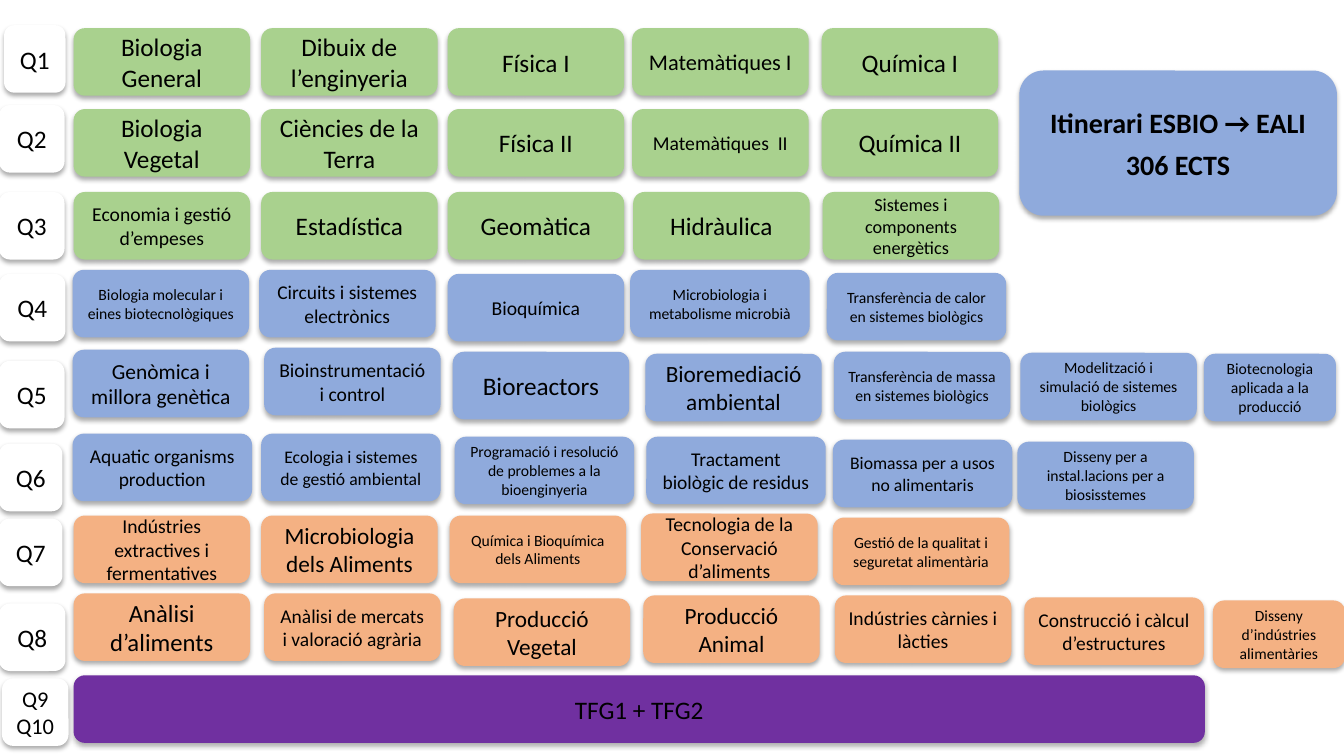
from dataclasses import dataclass

from lxml.etree import SubElement
from pptx import Presentation
from pptx.dml.color import RGBColor
from pptx.enum.shapes import MSO_SHAPE
from pptx.enum.text import MSO_ANCHOR, PP_ALIGN
from pptx.oxml.ns import qn
from pptx.util import Inches, Pt

BLACK = RGBColor(0x00, 0x00, 0x00)
WHITE = RGBColor(0xFF, 0xFF, 0xFF)
GREEN = RGBColor(0xA9, 0xD1, 0x8E)
BLUE = RGBColor(0x8F, 0xAA, 0xDC)
ORANGE = RGBColor(0xF4, 0xB1, 0x83)
PURPLE = RGBColor(0x70, 0x30, 0xA0)

FONT = "Calibri"
COLUMNS = (0.73, 2.59, 4.44, 6.27, 8.15, 10.12, 12.03)
FIRST_ROW, LAST_ROW, ROW_COUNT = 0.28, 6.70, 9
ROW_PITCH = (LAST_ROW - FIRST_ROW) / (ROW_COUNT - 1)
BOX_HEIGHT = 0.67
NORMAL, WIDE, NARROW = 1.75, 1.78, 1.31


@dataclass
class Course:
    name: str
    size: float = 18
    shift_x: float = 0
    shift_y: float = 0
    width: float = NORMAL


@dataclass
class Label:
    lines: tuple
    left: float
    shift_y: float
    width: float
    size: float = 18


LABELS = (
    Label(("Q1",), 0.04, -0.03, 0.61),
    Label(("Q2",), -0.01, -0.04, 0.65),
    Label(("Q3",), -0.01, 0.02, 0.65),
    Label(("Q4",), -0.01, 0.03, 0.66),
    Label(("Q5",), -0.01, 0.09, 0.65),
    Label(("Q6",), -0.01, 0.11, 0.63),
    Label(("Q7",), -0.01, 0.05, 0.63),
    Label(("Q8",), -0.01, 0.09, 0.66),
    Label(("Q9", "Q10"), 0.02, 0.03, 0.66, 16),
)

TERMS = (
    (GREEN, (
        Course("Biologia General"),
        Course("Dibuix de l’enginyeria"),
        Course("Física I"),
        Course("Matemàtiques I", 16),
        Course("Química I"),
    )),
    (GREEN, (
        Course("Biologia Vegetal"),
        Course("Ciències de la Terra"),
        Course("Física II"),
        Course("Matemàtiques  II", 14),
        Course("Química II"),
    )),
    (GREEN, (
        Course("Economia i gestió d’empeses", 14, 0, 0.02),
        Course("Estadística", 18, 0, 0.02),
        Course("Geomàtica", 18, 0, 0.02),
        Course("Hidràulica", 18, 0.01, 0.02),
        Course("Sistemes i components energètics", 13, 0.01, 0.02),
    )),
    (BLUE, (
        Course("Biologia molecular i eines biotecnològiques", 11.2, -0.01, -0.01),
        Course("Circuits i sistemes electrònics", 13.9, -0.02, -0.01),
        Course("Bioquímica", 14, 0, 0.03),
        Course("Microbiologia i metabolisme microbià", 11.2, -0.02, -0.01, WIDE),
        Course("Transferència de calor en sistemes biològics", 11.2, 0.05, 0.02, WIDE),
    )),
    (BLUE, (
        Course("Genòmica i millora genètica", 15.3, -0.01, -0.02),
        Course("Bioinstrumentació i control", 14, 0.03, -0.04),
        Course("Bioreactors", 18, 0.05, 0),
        Course("Bioremediació ambiental", 16.6, 0.13, 0.02),
        Course("Transferència de massa en sistemes biològics", 11.2, 0.12, 0),
        Course("Modelització i simulació de sistemes biològics", 11.2, 0, 0.01),
        Course("Biotecnologia aplicada a la producció", 11.2, -0.09, 0.02, NARROW),
    )),
    (BLUE, (
        Course("Aquatic organisms production", 13.9, -0.01, 0.01, WIDE),
        Course("Ecologia i sistemes de gestió ambiental", 12.6, 0, 0.01, WIDE),
        Course("Programació i resolució de problemes a la bioenginyeria",
               11.2, 0.07, 0.04, WIDE),
        Course("Tractament biològic de residus", 13.9, 0.14, 0.04, WIDE),
        Course("Biomassa per a usos no alimentaris", 12.6, 0.11, 0.07, WIDE),
        Course("Disseny per a instal.lacions per a biosisstemes", 11.2, -0.03, 0.09),
    )),
    (ORANGE, (
        Course("Indústries extractives i fermentatives", 14, 0, 0.02),
        Course("Microbiologia dels Aliments", 16.6, 0, 0.02),
        Course("Química i Bioquímica dels Aliments", 11.2, 0.02, 0.02),
        Course("Tecnologia de la Conservació d’aliments", 14, 0.09, 0),
        Course("Gestió de la qualitat i seguretat alimentària", 11.2, 0.11, 0.04),
    )),
    (ORANGE, (
        Course("Anàlisi d’aliments", 17.6, 0, -0.01),
        Course("Anàlisi de mercats i valoració agrària", 13.9, 0.03, -0.01),
        Course("Producció Vegetal", 16.6, 0.06, 0.04),
        Course("Producció Animal", 16.6, 0.11, 0.01),
        Course("Indústries càrnies i làcties", 14, 0.13, 0.01),
        Course("Construcció i càlcul d’estructures", 13.9, 0.04, 0.03, WIDE),
        Course("Disseny d’indústries alimentàries", 11.1, 0, 0.06, NARROW),
    )),
    (PURPLE, (Course("TFG1 + TFG2", width=11.22),)),
)


def add_soft_shadow(shape):
    shape.shadow.inherit = False
    effects = shape._element.spPr.find(qn("a:effectLst"))
    shadow = SubElement(effects, qn("a:outerShdw"), blurRad=str(Pt(3.5)),
                        dist=str(Pt(2.2)), dir="5400000", rotWithShape="0")
    color = SubElement(shadow, qn("a:srgbClr"), val=str(BLACK))
    SubElement(color, qn("a:alpha"), val="32000")


def add_box(slide, box, fill, lines, size, bold=False, space_before=0):
    shape = slide.shapes.add_shape(MSO_SHAPE.ROUNDED_RECTANGLE, *map(Inches, box))
    shape.fill.solid()
    shape.fill.fore_color.rgb = fill
    shape.line.fill.background()
    add_soft_shadow(shape)
    frame = shape.text_frame
    frame.word_wrap = True
    frame.vertical_anchor = MSO_ANCHOR.MIDDLE
    for index, line in enumerate(lines):
        paragraph = frame.add_paragraph() if index else frame.paragraphs[0]
        paragraph.alignment = PP_ALIGN.CENTER
        paragraph.space_before = Pt(space_before)
        run = paragraph.add_run()
        run.text = line
        run.font.name = FONT
        run.font.size = Pt(size)
        run.font.bold = bold
        run.font.color.rgb = BLACK


def add_term(slide, top, label, fill, courses):
    label_box = (label.left, top + label.shift_y, label.width, BOX_HEIGHT)
    add_box(slide, label_box, WHITE, label.lines, label.size)
    for column, course in zip(COLUMNS, courses):
        course_box = (column + course.shift_x, top + course.shift_y,
                      course.width, BOX_HEIGHT)
        add_box(slide, course_box, fill, (course.name,), course.size)


def add_itinerary(slide, box):
    add_box(slide, box, BLUE, ("Itinerari ESBIO → EALI", "306 ECTS"),
            20, bold=True, space_before=6)


def main():
    presentation = Presentation()
    presentation.slide_width = Inches(13.33)
    presentation.slide_height = Inches(7.5)
    slide = presentation.slides.add_slide(presentation.slide_layouts[6])
    add_itinerary(slide, (10.11, 0.7, 3.15, 1.44))
    for row, (label, (fill, courses)) in enumerate(zip(LABELS, TERMS)):
        add_term(slide, FIRST_ROW + row * ROW_PITCH, label, fill, courses)
    presentation.save("out.pptx")


if __name__ == "__main__":
    main()
